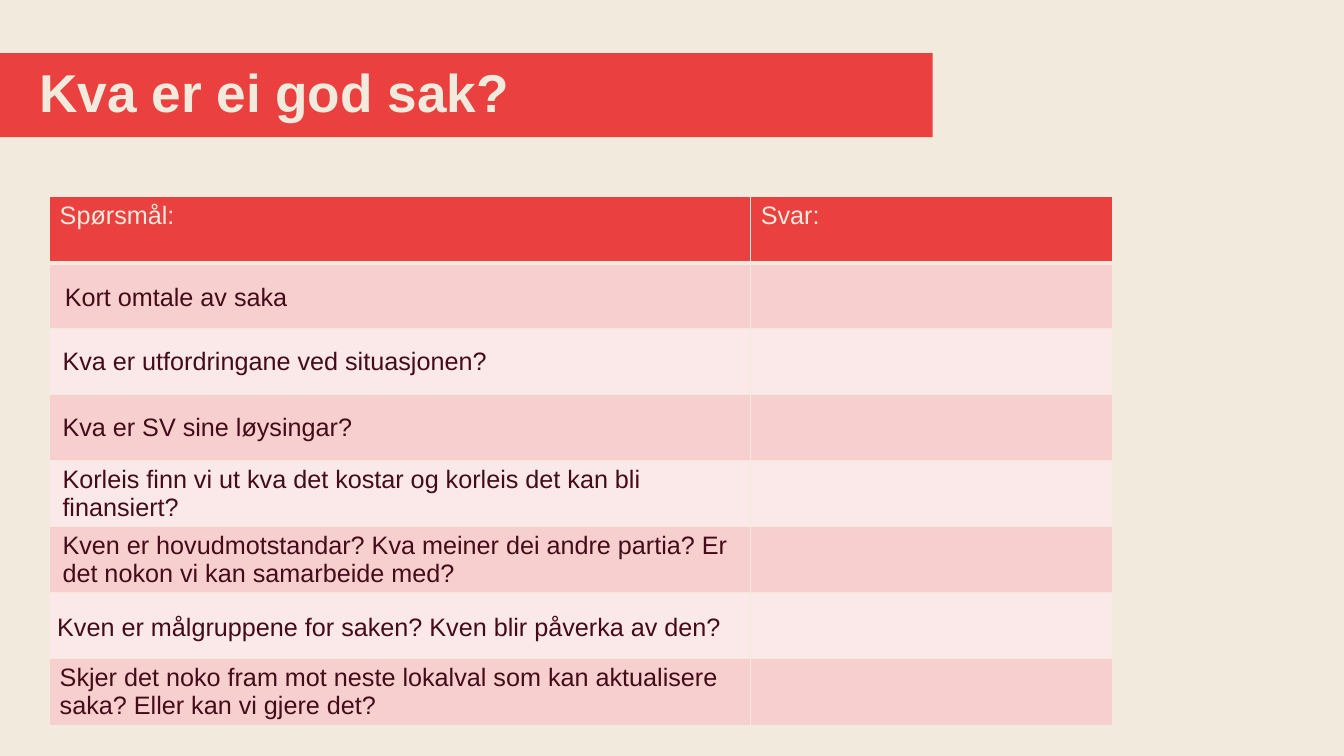
from lxml.etree import SubElement
from pptx import Presentation
from pptx.dml.color import RGBColor
from pptx.enum.text import MSO_ANCHOR as Anchor, PP_ALIGN as Align
from pptx.oxml.ns import qn
from pptx.util import Pt

CREAM, RED, HEADER_RED = "F2EBDD", "EB4040", "EA4040"
DARK_PINK, LIGHT_PINK, WINE = "F7CFCF", "FBE8E8", "440C1A"
FONT = "Arial"

HEADINGS = ("Spørsmål:", "Svar:")
# Question, side inset, top and bottom inset, line spacing, space after
QUESTIONS = (
    ("Kort omtale av saka", 10.8, 0, 1.15, 10),
    ("Kva er utfordringane ved situasjonen?", 9.2, 0, 1, 0),
    ("Kva er SV sine løysingar?", 9.2, 0, 1, 0),
    ("Korleis finn vi ut kva det kostar og korleis det kan bli finansiert?", 9.2, 0, 1, 0),
    ("Kven er hovudmotstandar? Kva meiner dei andre partia? "
     "Er det nokon vi kan samarbeide med?", 9.2, 0, 1, 0),
    ("Kven er målgruppene for saken? Kven blir påverka av den?", 5.4, 0, 1.15, 10),
    ("Skjer det noko fram mot neste lokalval som kan aktualisere saka? "
     "Eller kan vi gjere det?", 7.2, 3.6, 1, 0),
)


def paint(fill, color):
    fill.solid()
    fill.fore_color.rgb = RGBColor.from_string(color)


def write(frame, text, size, color, bold=False, spacing=1, after=0):
    paragraph = frame.paragraphs[0]
    paragraph.alignment = Align.LEFT
    paragraph.line_spacing = spacing
    paragraph.space_after = Pt(after)
    run = paragraph.add_run()
    run.text = text
    run.font.name, run.font.size, run.font.bold = FONT, Pt(size), bold
    run.font.color.rgb = RGBColor.from_string(color)


def set_insets(box, side, edge):
    box.margin_left = box.margin_right = Pt(side)
    box.margin_top = box.margin_bottom = Pt(edge)


def style_cell(cell, color, bottom_width=1):
    """Outline the cell in cream, then fill it."""
    properties = cell._tc.get_or_add_tcPr()
    for edge, width in (("L", 1), ("R", 1), ("T", 1), ("B", bottom_width)):
        line = SubElement(properties, qn(f"a:ln{edge}"), w=str(Pt(width)))
        SubElement(SubElement(line, qn("a:solidFill")), qn("a:srgbClr"), val=CREAM)
    paint(cell.fill, color)


def add_title(slide, left, top, width, height):
    title = slide.shapes.title
    title.left, title.top, title.width, title.height = map(Pt, (left, top, width, height))
    paint(title.fill, RED)
    frame = title.text_frame
    frame.word_wrap = True
    frame.vertical_anchor = Anchor.MIDDLE
    set_insets(frame, 28, 0)
    write(frame, "Kva er ei god sak?", 38, CREAM, bold=True, spacing=0.9)


def add_question_table(slide, left, top, width, height):
    row_count = len(QUESTIONS) + 1
    table = slide.shapes.add_table(
        row_count, len(HEADINGS), *map(Pt, (left, top, width, height))).table
    question_width = 501
    table.columns[0].width = Pt(question_width)
    table.columns[1].width = Pt(width - question_width)
    for row in table.rows:
        row.height = Pt(height / row_count)

    for column, heading in enumerate(HEADINGS):
        cell = table.cell(0, column)
        set_insets(cell, 7.2, 3.6)
        style_cell(cell, HEADER_RED, bottom_width=3)
        write(cell.text_frame, heading, 18, CREAM)

    for row, (question, side, edge, spacing, after) in enumerate(QUESTIONS, 1):
        for column in range(len(HEADINGS)):
            style_cell(table.cell(row, column), DARK_PINK if row % 2 else LIGHT_PINK)
        cell = table.cell(row, 0)
        cell.vertical_anchor = Anchor.MIDDLE
        set_insets(cell, side, edge)
        write(cell.text_frame, question, 18, WINE, spacing=spacing, after=after)


def main():
    deck = Presentation()
    deck.slide_width, deck.slide_height = Pt(960.5), Pt(540)
    slide = deck.slides.add_slide(deck.slide_layouts[5])
    paint(slide.background.fill, CREAM)
    add_title(slide, 0, 38, 666.5, 60)
    add_question_table(slide, 35.5, 140.5, 760, 377.2)
    deck.save("out.pptx")


if __name__ == "__main__":
    main()
